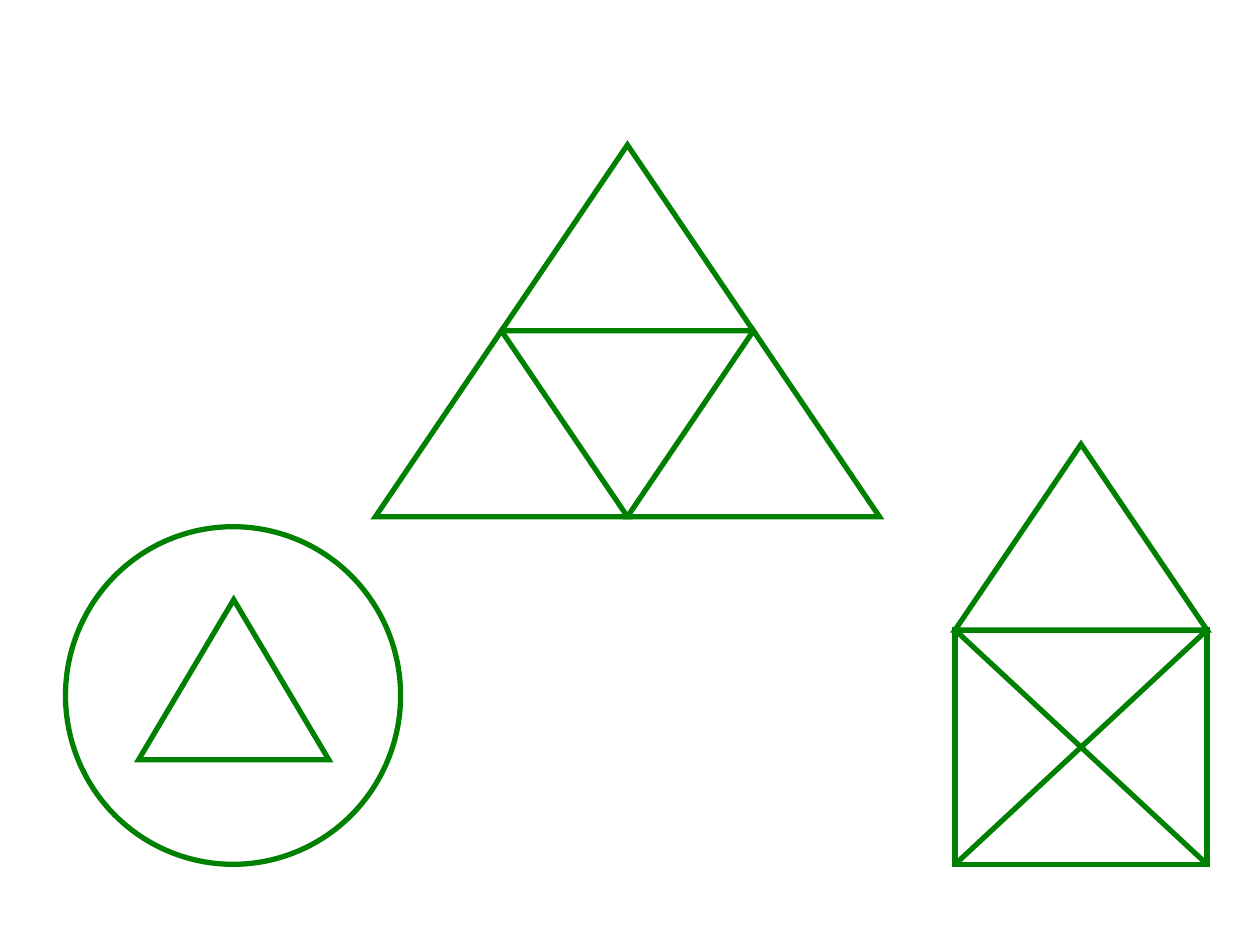
from dataclasses import dataclass

import pptx
import pptx.dml.color
import pptx.enum.shapes
import pptx.oxml.ns
import pptx.util
from lxml import etree

GREEN = pptx.dml.color.RGBColor(0x00, 0x80, 0x00)
WHITE = pptx.dml.color.RGBColor(0xFF, 0xFF, 0xFF)
LINE_WIDTH = pptx.util.Pt(3)
SLIDE_WIDTH = pptx.util.Inches(10)
SLIDE_HEIGHT = pptx.util.Inches(7.5)
GRID_COLUMNS = 100
GRID_ROWS = 75
Kind = pptx.enum.shapes.MSO_SHAPE


@dataclass(frozen=True)
class Figure:
    kind: Kind
    column: float
    row: float
    columns: float
    rows: float


def across(columns: float) -> int:
    return round(SLIDE_WIDTH * columns / GRID_COLUMNS)


def down(rows: float) -> int:
    return round(SLIDE_HEIGHT * rows / GRID_ROWS)


def style_line(line) -> None:
    line.color.rgb = GREEN
    line.width = LINE_WIDTH
    miter = etree.SubElement(line._get_or_add_ln(), pptx.oxml.ns.qn("a:miter"))
    miter.set("lim", "800000")


def draw_figure(slide, figure: Figure) -> None:
    shape = slide.shapes.add_shape(
        figure.kind,
        across(figure.column),
        down(figure.row),
        across(figure.columns),
        down(figure.rows),
    )
    shape.shadow.inherit = False
    shape.fill.solid()
    shape.fill.fore_color.rgb = WHITE
    style_line(shape.line)


def draw_diagonals(slide, figure: Figure) -> None:
    top, bottom = figure.row, figure.row + figure.rows
    for start, end in ((top, bottom), (bottom, top)):
        connector = slide.shapes.add_connector(
            pptx.enum.shapes.MSO_CONNECTOR.STRAIGHT,
            across(figure.column),
            down(start),
            across(figure.column + figure.columns),
            down(end),
        )
        style_line(connector.line)
        etree.SubElement(
            connector._element.spPr, pptx.oxml.ns.qn("a:effectLst")
        )


def main() -> None:
    presentation = pptx.Presentation()
    presentation.slide_width = SLIDE_WIDTH
    presentation.slide_height = SLIDE_HEIGHT
    slide = presentation.slides.add_slide(presentation.slide_layouts[6])

    side, height = 20, 14.75
    circle = Figure(Kind.OVAL, 5.2, 41.8, 26.6, 26.8)
    inner_triangle = Figure(Kind.ISOSCELES_TRIANGLE, 11, 47.6, 15.1, 12.7)
    house = Figure(Kind.RECTANGLE, 75.8, 50, side, 18.6)
    roof = Figure(
        Kind.ISOSCELES_TRIANGLE, house.column, house.row - height, side, height
    )
    apex_column, apex_row = 39.8, 11.5
    pyramid = [
        Figure(
            Kind.ISOSCELES_TRIANGLE,
            apex_column + (position - level / 2) * side,
            apex_row + level * height,
            side,
            height,
        )
        for level in range(2)
        for position in range(level + 1)
    ]

    for figure in (circle, inner_triangle, house, roof):
        draw_figure(slide, figure)
    draw_diagonals(slide, house)
    for figure in pyramid:
        draw_figure(slide, figure)

    presentation.save("out.pptx")


if __name__ == "__main__":
    main()
